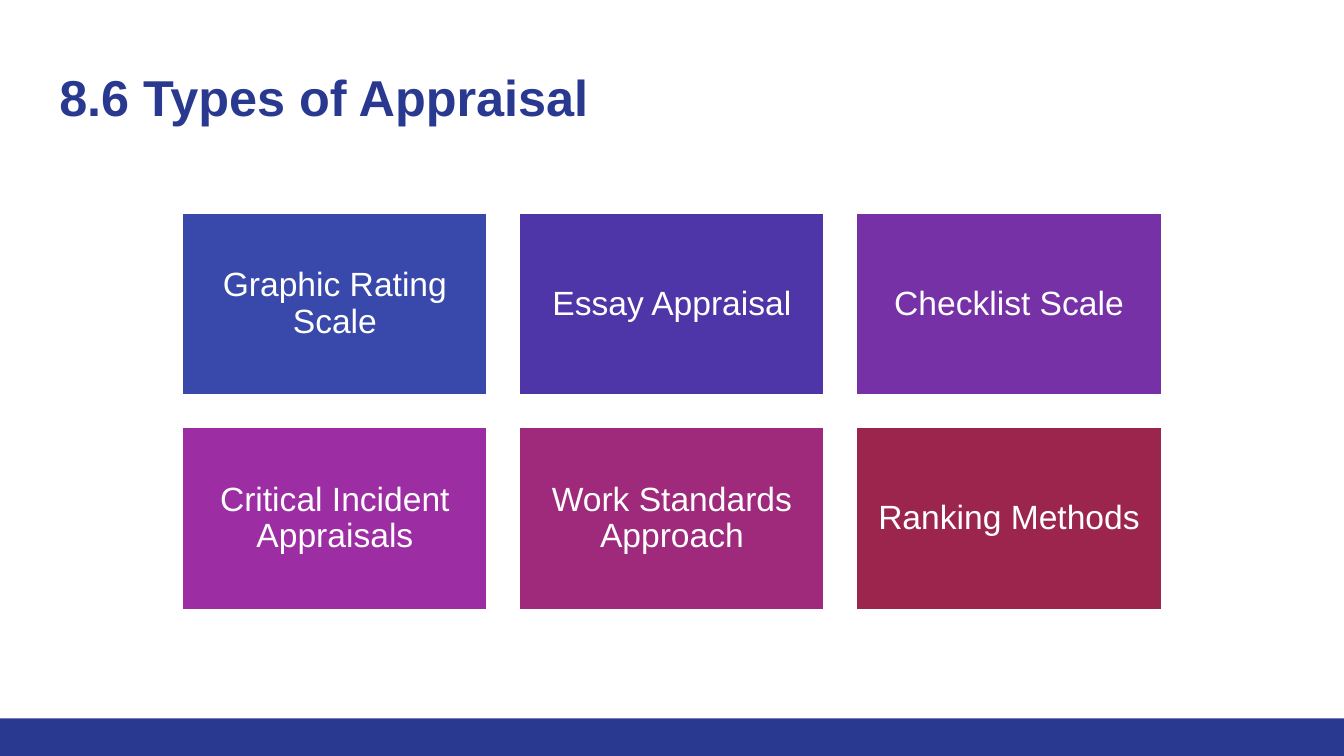
from pptx import Presentation
from pptx.dml.color import RGBColor
from pptx.enum import shapes, text
from pptx.util import Cm, Pt

TITLE = "8.6 Types of Appraisal"
TYPES = [
    ("Graphic Rating Scale", "3949AB"),
    ("Essay Appraisal", "4E35A8"),
    ("Checklist Scale", "7531A5"),
    ("Critical Incident Appraisals", "9C2DA2"),
    ("Work Standards Approach", "9F297B"),
    ("Ranking Methods", "9C254D"),
]
THEME = {"font": "Arial", "navy": "2A3990", "white": "FFFFFF", "title": 27, "body": 18}

# Lengths in centimetres
WIDTH, HEIGHT = 25.4, 14.29
BAR = 0.71
COLS, TOP = 3, 4.01
TILE_W, TILE_H, GAP = 5.8, 3.48, 0.57
LEFT = (WIDTH - COLS * TILE_W - (COLS - 1) * GAP) / 2


def write(shape, words, size, color, inset, anchor, align, bold=False):
    frame = shape.text_frame
    frame.text = words
    frame.word_wrap = True
    frame.auto_size = text.MSO_AUTO_SIZE.NONE
    frame.vertical_anchor = anchor
    frame.margin_left = frame.margin_right = Cm(inset)
    frame.margin_top = frame.margin_bottom = Cm(inset)
    para = frame.paragraphs[0]
    para.alignment = align
    para.font.name = THEME["font"]
    para.font.size = Pt(size)
    para.font.bold = bold
    para.font.color.rgb = RGBColor.from_string(color)
    return para


def add_rect(slide, left, top, width, height, color):
    rect = slide.shapes.add_shape(
        shapes.MSO_SHAPE.RECTANGLE, Cm(left), Cm(top), Cm(width), Cm(height))
    rect.shadow.inherit = False
    rect.fill.solid()
    rect.fill.fore_color.rgb = RGBColor.from_string(color)
    rect.line.fill.background()
    return rect


def add_tile(slide, index, words, color):
    row, col = divmod(index, COLS)
    tile = add_rect(slide, LEFT + col * (TILE_W + GAP), TOP + row * (TILE_H + GAP),
                    TILE_W, TILE_H, color)
    tile.line.color.rgb = RGBColor.from_string(THEME["white"])
    tile.line.width = Pt(2)
    para = write(tile, words, THEME["body"], THEME["white"], 0.18,
                 text.MSO_ANCHOR.MIDDLE, text.PP_ALIGN.CENTER)
    para.line_spacing = 0.9


def main():
    deck = Presentation()
    deck.slide_width, deck.slide_height = Cm(WIDTH), Cm(HEIGHT)
    slide = deck.slides.add_slide(deck.slide_layouts.get_by_name("Title Only"))

    add_rect(slide, 0, HEIGHT - BAR, WIDTH, BAR, THEME["navy"])

    title = slide.shapes.title
    title.left, title.top, title.width, title.height = Cm(0.87), Cm(0.97), Cm(23.66), Cm(1.68)
    write(title, TITLE, THEME["title"], THEME["navy"], 0.25,
          text.MSO_ANCHOR.BOTTOM, text.PP_ALIGN.LEFT, bold=True)

    for index, (words, color) in enumerate(TYPES):
        add_tile(slide, index, words, color)

    deck.save("out.pptx")


if __name__ == "__main__":
    main()
